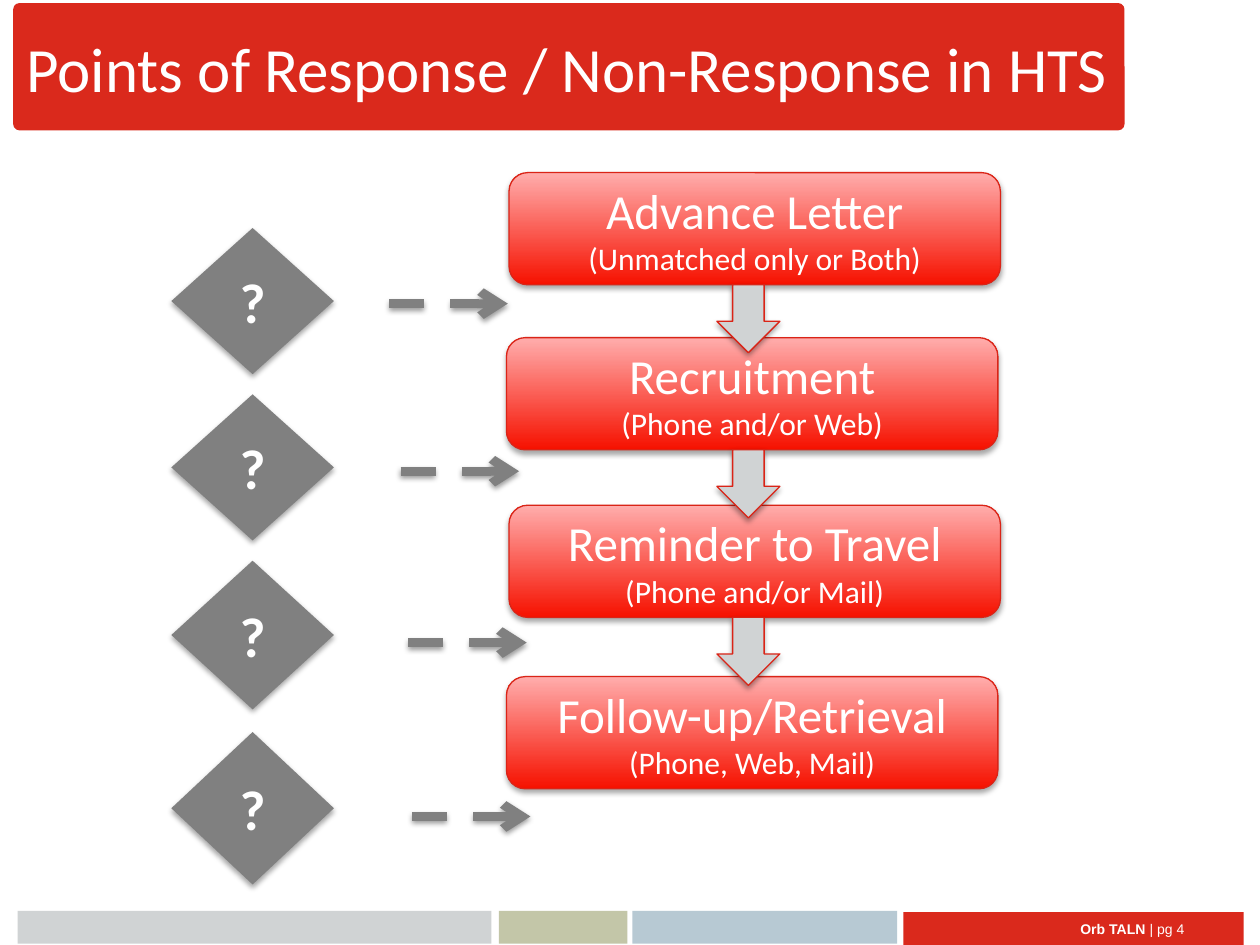
from typing import NamedTuple, Optional

from lxml.etree import SubElement
from pptx import Presentation
from pptx.dml.color import RGBColor
from pptx.enum.dml import MSO_LINE
from pptx.enum.shapes import MSO_CONNECTOR, MSO_SHAPE as SHAPE
from pptx.enum.text import MSO_ANCHOR, MSO_AUTO_SIZE, PP_ALIGN as ALIGN
from pptx.oxml.ns import qn
from pptx.util import Pt

PX = 9144  # EMU per px, 100 px to the inch
COLORS = {
    "red": "DA291C", "edge": "DA2417", "deep": "F61100", "pink": "FFADAC",
    "gray": "808080", "silver": "D0D3D4", "olive": "C3C6A8", "blue": "B7C9D3",
    "white": "FFFFFF", "black": "000000",
}


class Box(NamedTuple):
    left: int
    top: int
    width: int
    height: int


class Step(NamedTuple):
    title: str
    detail: str
    left: int
    top: int
    dash_left: int
    dash_y: int
    diamond_top: int
    diamond_height: int


STEPS = [
    Step("Advance Letter", "(Unmatched only or Both)", 404, 137, 309, 241, 181, 116),
    Step("Recruitment", "(Phone and/or Web)", 402, 268, 318, 374, 313, 116),
    Step("Reminder to Travel", "(Phone and/or Mail)", 404, 401, 324, 510, 445, 118),
    Step("Follow-up/Retrieval", "(Phone, Web, Mail)", 402, 537, 327, 648, 581, 121),
]
STEP_WIDTH, STEP_HEIGHT = 390, 89
ARROW_LEFT, ARROW_WIDTH, ARROW_HEIGHT = 569, 50, 54
DIAMOND_LEFT, DIAMOND_WIDTH = 136, 129
DASH_LENGTH = 94

BAR_TOP, BAR_HEIGHT = 723, 26
FOOTER_BARS = [
    (Box(717, BAR_TOP + 1, 270, BAR_HEIGHT), "red"),
    (Box(14, BAR_TOP, 376, BAR_HEIGHT), "silver"),
    (Box(396, BAR_TOP, 102, BAR_HEIGHT), "olive"),
    (Box(502, BAR_TOP, 210, BAR_HEIGHT), "blue"),
]


def rgb(name: str) -> RGBColor:
    return RGBColor.from_string(COLORS[name])


def emu(box) -> list:
    return [v * PX for v in box]


def add_shadow(sp, alpha: int = 35, distance: float = 1.8) -> None:
    effects = SubElement(sp._element.spPr, qn("a:effectLst"))
    shadow = SubElement(effects, qn("a:outerShdw"), blurRad=str(Pt(3.1)),
                        dist=str(Pt(distance)), dir="5400000", rotWithShape="0")
    color = SubElement(shadow, qn("a:srgbClr"), val=COLORS["black"])
    SubElement(color, qn("a:alpha"), val=str(alpha * 1000))


def add_block(slide, kind, box: Box, fill: Optional[str], line: Optional[str] = None,
              shadow: bool = True):
    """Add a preset shape; a fill of None gives the red step gradient."""
    sp = slide.shapes.add_shape(kind, *emu(box))
    if fill:
        sp.fill.solid()
        sp.fill.fore_color.rgb = rgb(fill)
    else:
        sp.fill.gradient()
        sp.fill.gradient_angle = 90
        for stop, name in zip(sp.fill.gradient_stops, ("deep", "pink")):
            stop.color.rgb = rgb(name)
    if line:
        sp.line.color.rgb = rgb(line)
        sp.line.width = Pt(0.75)
    else:
        sp.line.fill.background()
    if shadow:
        add_shadow(sp)
    else:
        sp.shadow.inherit = False
    return sp


def add_run(p, text: str, size: int, bold: bool = False, font: str = "Calibri") -> None:
    r = p.add_run()
    r.text = text
    for key, value in {"name": font, "size": Pt(size), "bold": bold}.items():
        setattr(r.font, key, value)
    r.font.color.rgb = rgb("white")


def prepare_text(sp, align):
    """Centre the text vertically and return its first paragraph."""
    tf = sp.text_frame
    settings = {"word_wrap": True, "auto_size": MSO_AUTO_SIZE.NONE,
                "vertical_anchor": MSO_ANCHOR.MIDDLE}
    for key, value in settings.items():
        setattr(tf, key, value)
    p = tf.paragraphs[0]
    p.alignment = align
    return p


def add_step(slide, step: Step) -> None:
    sp = add_block(slide, SHAPE.FLOWCHART_ALTERNATE_PROCESS,
                   Box(step.left, step.top, STEP_WIDTH, STEP_HEIGHT), None, "edge")
    add_run(prepare_text(sp, ALIGN.CENTER), step.title, 28)
    p = sp.text_frame.add_paragraph()
    p.alignment = ALIGN.CENTER
    add_run(p, step.detail, 18)


def add_dashed_arrow(slide, step: Step) -> None:
    ends = (step.dash_left, step.dash_y, step.dash_left + DASH_LENGTH, step.dash_y)
    line = slide.shapes.add_connector(MSO_CONNECTOR.STRAIGHT, *emu(ends))
    line.line.color.rgb = rgb("gray")
    line.line.width = Pt(5)
    line.line.dash_style = MSO_LINE.DASH
    SubElement(line.line._get_or_add_ln(), qn("a:tailEnd"), type="arrow")
    add_shadow(line, 38, 1.6)


def add_question(slide, step: Step) -> None:
    box = Box(DIAMOND_LEFT, step.diamond_top, DIAMOND_WIDTH, step.diamond_height)
    sp = add_block(slide, SHAPE.FLOWCHART_DECISION, box, "gray")
    add_run(prepare_text(sp, ALIGN.CENTER), "?", 32, bold=True)


def add_frame(slide) -> None:
    """Draw the title band, the footer bars and the page label."""
    band = add_block(slide, SHAPE.ROUNDED_RECTANGLE, Box(11, 3, 881, 100), "red", "red",
                     shadow=False)
    band.adjustments[0] = 0.045
    for box, color in FOOTER_BARS:
        add_block(slide, SHAPE.RECTANGLE, box, color, shadow=False)
    label = slide.shapes.add_textbox(*emu(Box(717, 723, 233, 29)))
    p = prepare_text(label, ALIGN.RIGHT)
    add_run(p, "Orb TALN ", 8, bold=True, font="Arial")
    add_run(p, "| pg 4", 8, font="Arial")


def set_title(slide, text: str) -> None:
    title = slide.shapes.title
    title.left, title.top, title.width, title.height = emu(Box(11, 3, 896, 101))
    add_run(prepare_text(title, ALIGN.LEFT), text, 36)
    slide.shapes._spTree.append(title._element)  # in front of the band


def main() -> None:
    prs = Presentation()
    prs.slide_width, prs.slide_height = 1000 * PX, 750 * PX
    slide = prs.slides.add_slide(prs.slide_layouts[5])
    add_frame(slide)
    set_title(slide, "Points of Response / Non-Response in HTS")
    for step in STEPS:
        add_step(slide, step)
    for step in STEPS[:-1]:
        box = Box(ARROW_LEFT, step.top + STEP_HEIGHT, ARROW_WIDTH, ARROW_HEIGHT)
        add_block(slide, SHAPE.DOWN_ARROW, box, "silver", "edge")
    for step in STEPS:
        add_dashed_arrow(slide, step)
        add_question(slide, step)
    prs.save("out.pptx")


if __name__ == "__main__":
    main()
